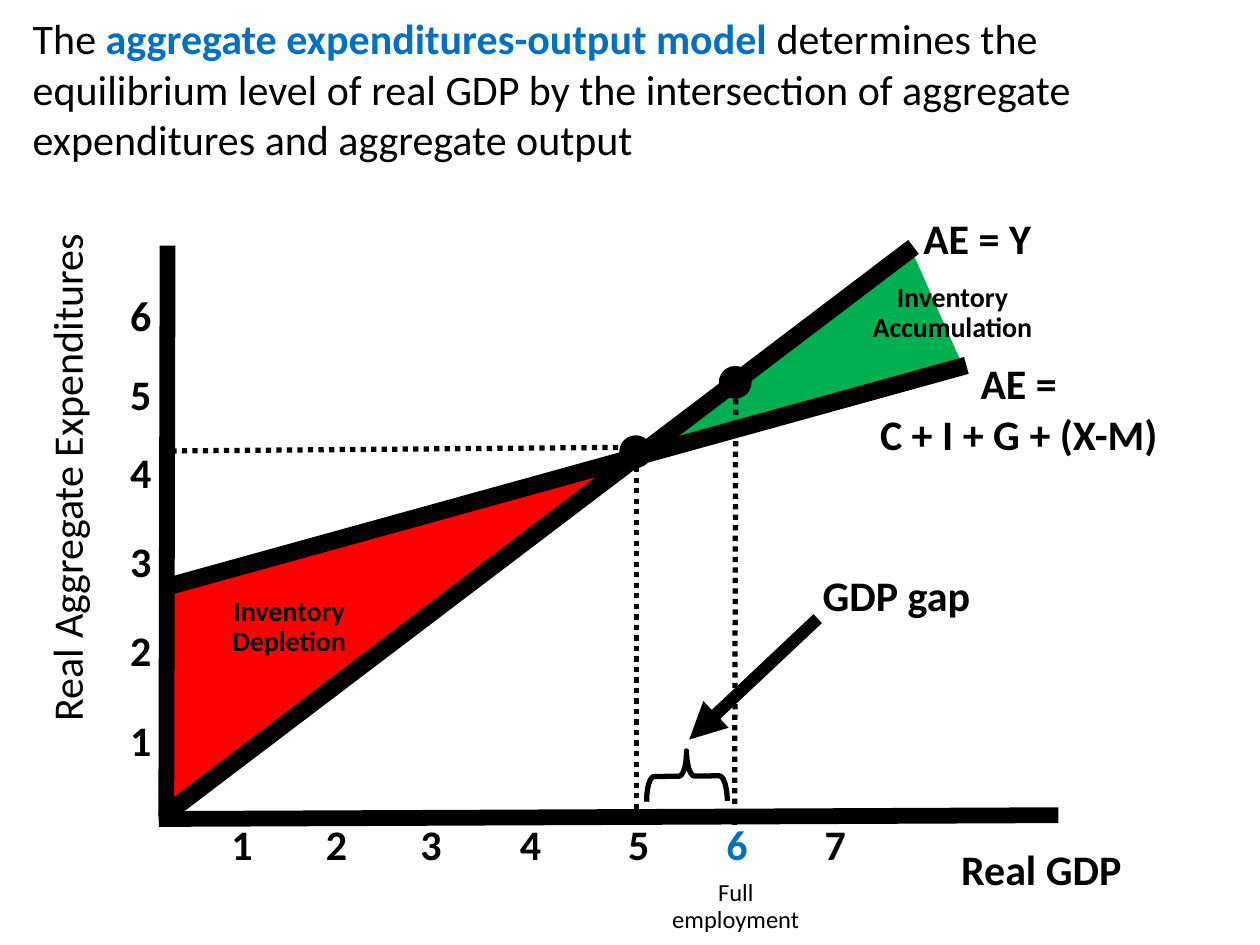
from lxml.etree import SubElement
from pptx import Presentation
from pptx.dml.color import RGBColor
from pptx.enum.dml import MSO_LINE as Dash
from pptx.enum.shapes import MSO_CONNECTOR as Conn, MSO_SHAPE as Kind
from pptx.enum.text import MSO_ANCHOR as Anchor, MSO_AUTO_SIZE as Fit, PP_ALIGN as Align
from pptx.oxml.ns import qn
from pptx.util import Inches, Pt

BLACK = RGBColor(0x00, 0x00, 0x00)
BLUE = RGBColor(0x00, 0x70, 0xC0)
GREEN = RGBColor(0x00, 0xB0, 0x50)
RED = RGBColor(0xFF, 0x00, 0x00)
FONT = "Calibri"


def style(run, size=24, color=BLACK, bold=True):
    """Format the font of a run."""
    font = run.font
    font.name, font.size, font.bold = FONT, Pt(size), bold
    font.color.rgb = color


def note(slide, box, text, align=Align.CENTER, space=0.9, turn=0, **look):
    """Add a text box at x, y, w, h with one paragraph per line of text."""
    shape = slide.shapes.add_textbox(*map(Inches, box))
    shape.rotation = turn
    frame = shape.text_frame
    frame.word_wrap = True
    frame.text = text
    for para in frame.paragraphs:
        para.alignment, para.line_spacing = align, space
        for run in para.runs:
            style(run, **look)


def line(slide, start, end, width, dots=False, arrow=False):
    """Draw a straight black line, dotted or with an arrowhead if asked."""
    link = slide.shapes.add_connector(Conn.STRAIGHT, *map(Inches, start + end))
    link.line.color.rgb = BLACK
    link.line.width = Pt(width)
    if dots:
        link.line.dash_style = Dash.ROUND_DOT
    if arrow:
        SubElement(link.line._get_or_add_ln(), qn("a:tailEnd"), type="triangle")
    SubElement(link._element.spPr, qn("a:effectLst"))


def form(slide, kind, box, fill=None, width=0, turn=0, flip=False, adjust=()):
    """Add a preset shape with optional fill, outline, rotation and flip."""
    shape = slide.shapes.add_shape(kind, *map(Inches, box))
    shape.shadow.inherit = False
    shape.rotation = turn
    for spot, value in enumerate(adjust):
        shape.adjustments[spot] = value
    if flip:
        shape._element.spPr.xfrm.set("flipH", "1")
    if fill is None:
        shape.fill.background()
    else:
        shape.fill.solid()
        shape.fill.fore_color.rgb = fill
    if width:
        shape.line.color.rgb = BLACK
        shape.line.width = Pt(width)
    else:
        shape.line.fill.background()


def head(slide, box):
    """Fill the title with the definition of the model."""
    title = slide.shapes.title
    title.left, title.top, title.width, title.height = map(Inches, box)
    frame = title.text_frame
    frame.word_wrap, frame.auto_size = True, Fit.NONE
    frame.vertical_anchor = Anchor.TOP
    para = frame.paragraphs[0]
    para.alignment = Align.LEFT
    parts = [
        ("The ", BLACK, False),
        ("aggregate expenditures-output model ", BLUE, True),
        ("determines the equilibrium level of real GDP by the intersection of "
         "aggregate expenditures and aggregate output", BLACK, False),
    ]
    for text, color, bold in parts:
        run = para.add_run()
        run.text = text
        style(run, color=color, bold=bold)


def ticks(slide, x, y):
    """Number both axes and name them."""
    tops = [4.17, 3.45, 2.75, 2.04, 1.42, 0.79]
    for count, top in enumerate(tops, 1):
        note(slide, (x - 0.43, y + top, 0.73, 0.46), str(count), align=Align.RIGHT)
    mids = [0.92, 1.67, 2.42, 3.21, 4.07, 4.85, 5.63]
    for count, mid in enumerate(mids, 1):
        color = BLUE if count == 6 else BLACK
        note(slide, (x + mid - 0.35, y + 4.99, 0.7, 0.46), str(count), color=color)
    note(slide, (x + 6.53, y + 5.19, 1.74, 0.46), "Real GDP", align=Align.LEFT)
    note(slide, (x - 2.93, y + 2.06, 4.96, 0.46), "Real Aggregate Expenditures",
         turn=270, bold=False)
    note(slide, (x + 4.11, y + 5.44, 1.46, 0.53), "Full employment", size=14, bold=False)


def areas(slide, x, y):
    """Shade the inventory areas between the curves and label them."""
    form(slide, Kind.ISOSCELES_TRIANGLE, (x + 4.81, y + 0.19, 1, 2.44), GREEN,
         turn=246.1, adjust=[0.396])
    form(slide, Kind.ISOSCELES_TRIANGLE, (x + 1.78, y + 0.86, 1.34, 4.01), RED,
         turn=62.1, flip=True, adjust=[0.408])
    form(slide, Kind.ISOSCELES_TRIANGLE, (x - 0.16, y + 3.33, 1.06, 1.41), RED,
         turn=326.6, flip=True, adjust=[0.068])
    note(slide, (x + 0.42, y + 3.19, 1.75, 0.59), "Inventory Depletion", size=16)
    note(slide, (x + 5.48, y + 0.7, 2.16, 0.59), "Inventory Accumulation", size=16)


def curves(slide, x, y):
    """Draw the axes, both curves, their guides and the marked points."""
    solid = [
        ((0.35, 3.15), (6.67, 1.4), 10),
        ((0.32, 4.96), (6.25, 0.46), 10),
        ((0.26, 5), (7.4, 4.97), 9),
        ((0.33, 0.45), (0.32, 4.98), 9),
    ]
    dotted = [
        ((3.99, 2.05), (0.26, 2.08), 3),
        ((4.84, 1.5), (4.83, 5.05), 3),
        ((4.05, 2.04), (4.05, 4.95), 3),
    ]
    for group, dots in ((dotted, True), (solid, False)):
        for (left, top), (right, low), width in group:
            line(slide, (x + left, y + top), (x + right, y + low), width, dots)
    for left, top in ((4.71, 1.41), (3.92, 1.96)):
        form(slide, Kind.OVAL, (x + left, y + top, 0.25, 0.25), BLACK, 0.75)
    note(slide, (x + 6.23, y + 0.18, 1.83, 0.46), "AE = Y", align=Align.LEFT)
    note(slide, (x + 5.79, y + 1.29, 2.59, 0.9), "AE =\nC + I + G + (X-M)", space=1)


def gap(slide, x, y):
    """Bracket the GDP gap and point at it."""
    form(slide, Kind.LEFT_BRACE, (x + 4.25, y + 4.34, 0.4, 0.64), width=3,
         turn=89.4, adjust=[0.153, 0.5])
    line(slide, (x + 5.49, y + 3.41), (x + 4.47, y + 4.37), 7, arrow=True)
    note(slide, (x + 5.28, y + 3.02, 1.67, 0.46), "GDP gap")


def main():
    """Build the slide and save it."""
    deck = Presentation()
    deck.slide_width, deck.slide_height = Inches(10), Inches(7.5)
    slide = deck.slides.add_slide(deck.slide_layouts[5])
    head(slide, (0.16, 0.05, 9.33, 1.31))
    for part in (areas, curves, ticks, gap):
        part(slide, 1, 1.5)
    deck.save("out.pptx")


if __name__ == "__main__":
    main()
